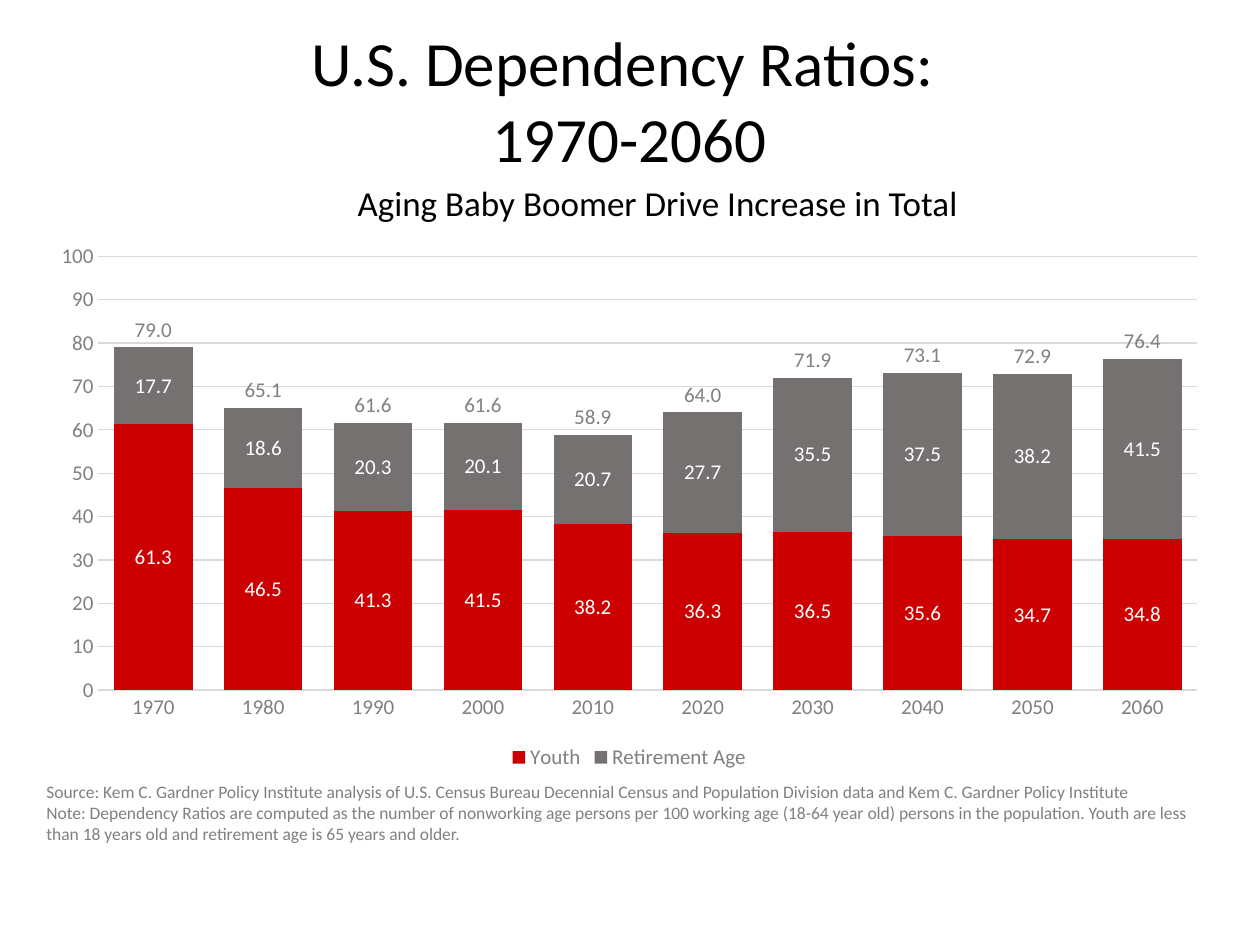
from lxml import etree
from pptx import Presentation
from pptx.chart.data import CategoryChartData
from pptx.dml.color import RGBColor
from pptx.enum.chart import XL_CHART_TYPE, XL_LABEL_POSITION, XL_LEGEND_POSITION, XL_TICK_MARK
from pptx.enum.text import MSO_ANCHOR, PP_ALIGN
from pptx.oxml import parse_xml
from pptx.oxml.ns import nsdecls
from pptx.util import Inches, Pt

STACKED = XL_CHART_TYPE.COLUMN_STACKED
CENTER_LABEL = XL_LABEL_POSITION.CENTER
BASE_LABEL = XL_LABEL_POSITION.INSIDE_BASE
LEGEND_BOTTOM = XL_LEGEND_POSITION.BOTTOM
NO_TICK = XL_TICK_MARK.NONE
CENTER = PP_ALIGN.CENTER
BOTTOM = MSO_ANCHOR.BOTTOM

BLACK = RGBColor(0, 0, 0)
WHITE = RGBColor(255, 255, 255)
RED = RGBColor(0xCC, 0, 0)
DARK_GRAY = RGBColor(0x76, 0x71, 0x71)
GRAY = RGBColor(0x80, 0x80, 0x80)
LIGHT_GRAY = RGBColor(0xD9, 0xD9, 0xD9)
FONT = "Calibri"

YEARS = [str(year) for year in range(1970, 2061, 10)]
SERIES = [
    ("Youth", [61.3, 46.5, 41.3, 41.5, 38.2, 36.3, 36.5, 35.6, 34.7, 34.8],
     RED, WHITE, CENTER_LABEL),
    ("Retirement Age", [17.7, 18.6, 20.3, 20.1, 20.7, 27.7, 35.5, 37.5, 38.2, 41.5],
     DARK_GRAY, WHITE, CENTER_LABEL),
    ("Series 3", [79, 65.1, 61.6, 61.6, 58.9, 64, 71.9, 73.1, 72.9, 76.4],
     None, GRAY, BASE_LABEL),
]
HEADLINE = ["U.S. Dependency Ratios: ", "1970-2060"]
NOTES = [
    "Source: Kem C. Gardner Policy Institute analysis of U.S. Census Bureau Decennial Census "
    "and Population Division data and Kem C. Gardner Policy Institute",
    "Note: Dependency Ratios are computed as the number of nonworking age persons per 100 "
    "working age (18-64 year old) persons in the population. Youth are less than 18 years old "
    "and retirement age is 65 years and older.",
]


def set_font(font, size, color):
    font.name = FONT
    font.size = Pt(size)
    font.color.rgb = color


def set_line(line, color):
    line.color.rgb = color
    line.width = Pt(0.75)


def place_subtitle(page, left, top, width, height):
    title = page.shapes.title
    title.left, title.top, title.width, title.height = left, top, width, height
    frame = title.text_frame
    frame.text = "Aging Baby Boomer Drive Increase in Total"
    frame.word_wrap = True
    frame.vertical_anchor = BOTTOM
    frame.margin_bottom = Inches(0.25)
    para = frame.paragraphs[0]
    para.alignment = CENTER
    para.line_spacing = 0.9
    set_font(para.font, 20, BLACK)


def add_text(page, left, top, width, height, lines, size, color, alignment=None):
    box = page.shapes.add_textbox(left, top, width, height)
    frame = box.text_frame
    frame.word_wrap = True
    frame.text = "\n".join(lines)
    for para in frame.paragraphs:
        para.alignment = alignment
        set_font(para.font, size, color)


def format_axes(chart):
    for axis in (chart.category_axis, chart.value_axis):
        axis.major_tick_mark = axis.minor_tick_mark = NO_TICK
        set_font(axis.tick_labels.font, 12, GRAY)
    set_line(chart.category_axis.format.line, LIGHT_GRAY)
    values = chart.value_axis
    values.minimum_scale = 0
    values.maximum_scale = 100
    values.major_unit = 10
    values.format.line.fill.background()
    set_line(values.major_gridlines.format.line, LIGHT_GRAY)


def format_legend(chart, hidden_index):
    chart.has_legend = True
    legend = chart.legend
    legend.position = LEGEND_BOTTOM
    legend.include_in_layout = False
    set_font(legend.font, 12, GRAY)
    entry = parse_xml(f"<c:legendEntry {nsdecls('c')}/>")
    for tag, value in (("idx", hidden_index), ("delete", 1)):
        child = etree.SubElement(entry, f"{{{entry.nsmap['c']}}}{tag}")
        child.set("val", str(value))
    legend._element.insert(1, entry)


def add_ratio_chart(page, left, top, width, height):
    data = CategoryChartData(number_format="#,##0.0")
    data.categories = YEARS
    for name, values, *_ in SERIES:
        data.add_series(name, values)
    chart = page.shapes.add_chart(STACKED, left, top, width, height, data).chart
    chart.has_title = False
    set_font(chart.font, 12, GRAY)
    plot = chart.plots[0]
    plot.gap_width = 40
    plot.overlap = 100
    plot.vary_by_categories = False
    for series, (_, _, fill, label_color, position) in zip(plot.series, SERIES):
        if fill is None:
            series.format.fill.background()
        else:
            series.format.fill.solid()
            series.format.fill.fore_color.rgb = fill
        labels = series.data_labels
        labels.show_value = True
        labels.number_format = "#,##0.0"
        labels.number_format_is_linked = False
        labels.position = position
        set_font(labels.font, 12, label_color)
    format_axes(chart)
    chart.value_axis.tick_labels.number_format = "0"
    chart.value_axis.tick_labels.number_format_is_linked = False
    format_legend(chart, len(SERIES) - 1)


def main():
    deck = Presentation()
    deck.slide_width, deck.slide_height = Inches(10), Inches(7.5)
    page = deck.slides.add_slide(deck.slide_layouts[5])
    place_subtitle(page, Inches(0.91), Inches(0.58), Inches(8.62), Inches(1.45))
    add_ratio_chart(page, Inches(0.3), Inches(1.85), Inches(9.39), Inches(4.3))
    add_text(page, Inches(0.27), Inches(6.15), Inches(9.46), Inches(0.61), NOTES, 10, GRAY)
    add_text(page, Inches(0.3), Inches(0.14), Inches(9.39), Inches(1.31),
             HEADLINE, 36, BLACK, CENTER)
    deck.save("out.pptx")


if __name__ == "__main__":
    main()
